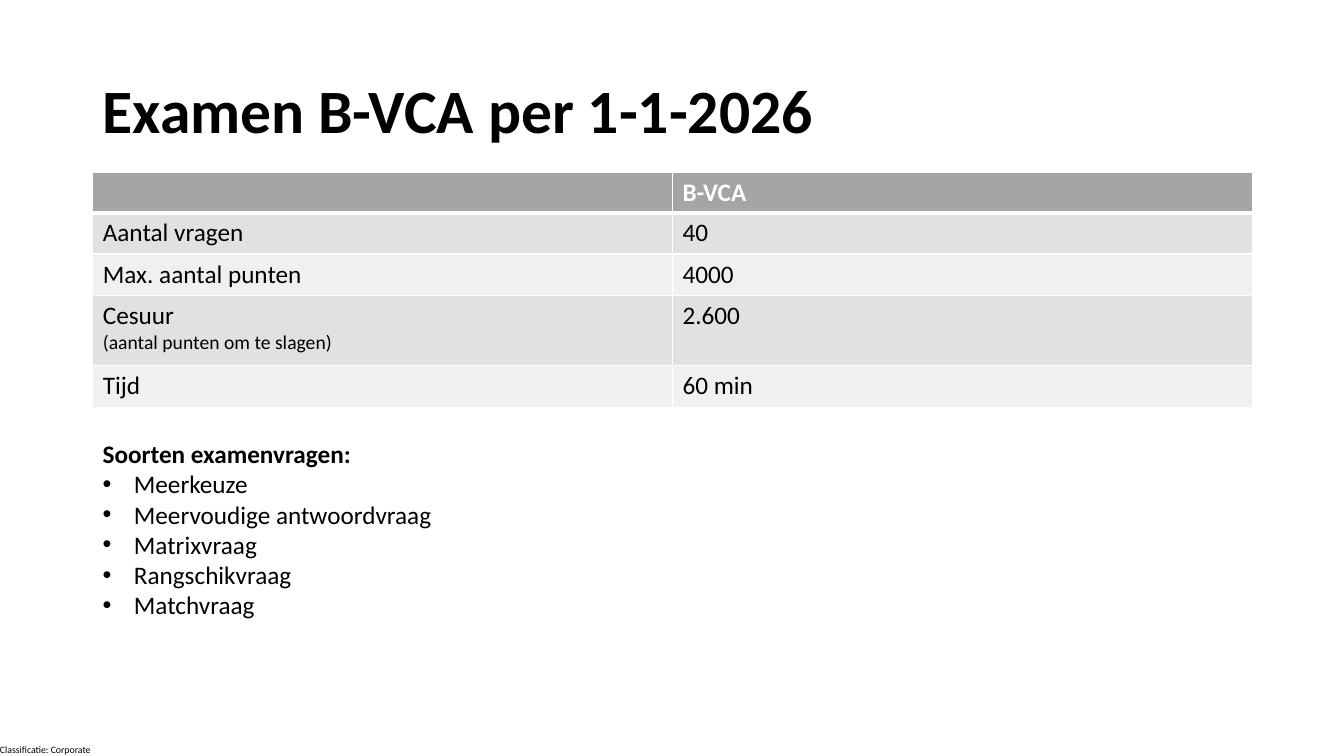
from dataclasses import dataclass

from lxml import etree
from pptx import Presentation
from pptx import util as u
from pptx.dml import color
from pptx.enum import text
from pptx.oxml import ns


@dataclass(frozen=True)
class Theme:
    font: str = "Calibri"
    ink: str = "000000"
    white: str = "FFFFFF"
    header: str = "A5A5A5"
    bands: tuple = ("E1E1E1", "F0F0F0")
    title: int = 44
    body: int = 18
    note: int = 14
    footer: int = 7
    rule: int = 1
    header_rule: int = 3


class SlideBuilder:
    def __init__(self, slide, theme):
        self.slide = slide
        self.theme = theme

    def add_text(self, paragraph, words, size, bold=False, ink=None):
        run = paragraph.add_run()
        run.text = words
        run.font.name = self.theme.font
        run.font.size = u.Pt(size)
        run.font.bold = bold
        run.font.color.rgb = color.RGBColor.from_string(ink or self.theme.ink)

    def text_box(self, left, top, width, height):
        box = self.slide.shapes.add_textbox(*map(u.Inches, (left, top, width, height)))
        box.text_frame.word_wrap = True
        return box.text_frame

    def title(self, words):
        frame = self.text_box(0.92, 0.4, 11.5, 1.45)
        frame.vertical_anchor = text.MSO_ANCHOR.MIDDLE
        frame.paragraphs[0].line_spacing = 0.9
        self.add_text(frame.paragraphs[0], words, self.theme.title, bold=True)

    def footer(self, words):
        frame = self.text_box(0, 7.38, 0.94, 0.12)
        frame.word_wrap = False
        frame.margin_left = frame.margin_right = 0
        frame.margin_top = frame.margin_bottom = 0
        self.add_text(frame.paragraphs[0], words, self.theme.footer)

    def bullet_list(self, heading, items):
        frame = self.text_box(0.92, 4.3, 10.72, 1.92)
        self.add_text(frame.paragraphs[0], heading, self.theme.body, bold=True)
        for item in items:
            paragraph = frame.add_paragraph()
            properties = paragraph._p.get_or_add_pPr()
            properties.set("marL", str(u.Inches(0.31)))
            properties.set("indent", str(u.Inches(-0.31)))
            etree.SubElement(properties, ns.qn("a:buFont"), typeface="Arial")
            etree.SubElement(properties, ns.qn("a:buChar"), char="•")
            self.add_text(paragraph, item, self.theme.body)

    def cell_borders(self, cell, row):
        widths = {side: self.theme.rule for side in "LRTB"}
        if row == 0:
            widths["B"] = self.theme.header_rule
        elif row == 1:
            widths["T"] = self.theme.header_rule
        properties = cell._tc.get_or_add_tcPr()
        for side, width in widths.items():
            line = etree.SubElement(properties, ns.qn(f"a:ln{side}"), w=str(u.Pt(width)))
            fill = etree.SubElement(line, ns.qn("a:solidFill"))
            etree.SubElement(fill, ns.qn("a:srgbClr"), val=self.theme.white)

    def table(self, rows, heights):
        frame = self.slide.shapes.add_table(
            len(rows), len(rows[0]), u.Inches(0.92), u.Inches(1.71),
            u.Inches(11.5), u.Inches(sum(heights)))
        table = frame.table
        table.first_row = table.horz_banding = False
        for row, (values, height) in enumerate(zip(rows, heights)):
            table.rows[row].height = u.Inches(height)
            header = row == 0
            shade = self.theme.header if header else self.theme.bands[(row - 1) % 2]
            for column, value in enumerate(values):
                cell = table.cell(row, column)
                self.cell_borders(cell, row)
                cell.fill.solid()
                cell.fill.fore_color.rgb = color.RGBColor.from_string(shade)
                main_line, *notes = value.split("\n")
                if main_line:
                    self.add_text(cell.text_frame.paragraphs[0], main_line, self.theme.body,
                                  header, self.theme.white if header else None)
                for note in notes:
                    self.add_text(cell.text_frame.add_paragraph(), note, self.theme.note)


def main():
    presentation = Presentation()
    presentation.slide_width = u.Inches(13.33)
    presentation.slide_height = u.Inches(7.5)
    slide = presentation.slides.add_slide(presentation.slide_layouts[6])
    builder = SlideBuilder(slide, Theme())
    builder.footer("Classificatie: Corporate")
    builder.table(
        [
            ("", "B-VCA"),
            ("Aantal vragen", "40"),
            ("Max. aantal punten", "4000"),
            ("Cesuur\n(aantal punten om te slagen)", "2.600"),
            ("Tijd", "60 min"),
        ],
        [0.4, 0.41, 0.41, 0.7, 0.41],
    )
    builder.title("Examen B-VCA per 1-1-2026")
    builder.bullet_list(
        "Soorten examenvragen:",
        ["Meerkeuze", "Meervoudige antwoordvraag", "Matrixvraag",
         "Rangschikvraag", "Matchvraag"],
    )
    presentation.save("out.pptx")


if __name__ == "__main__":
    main()
